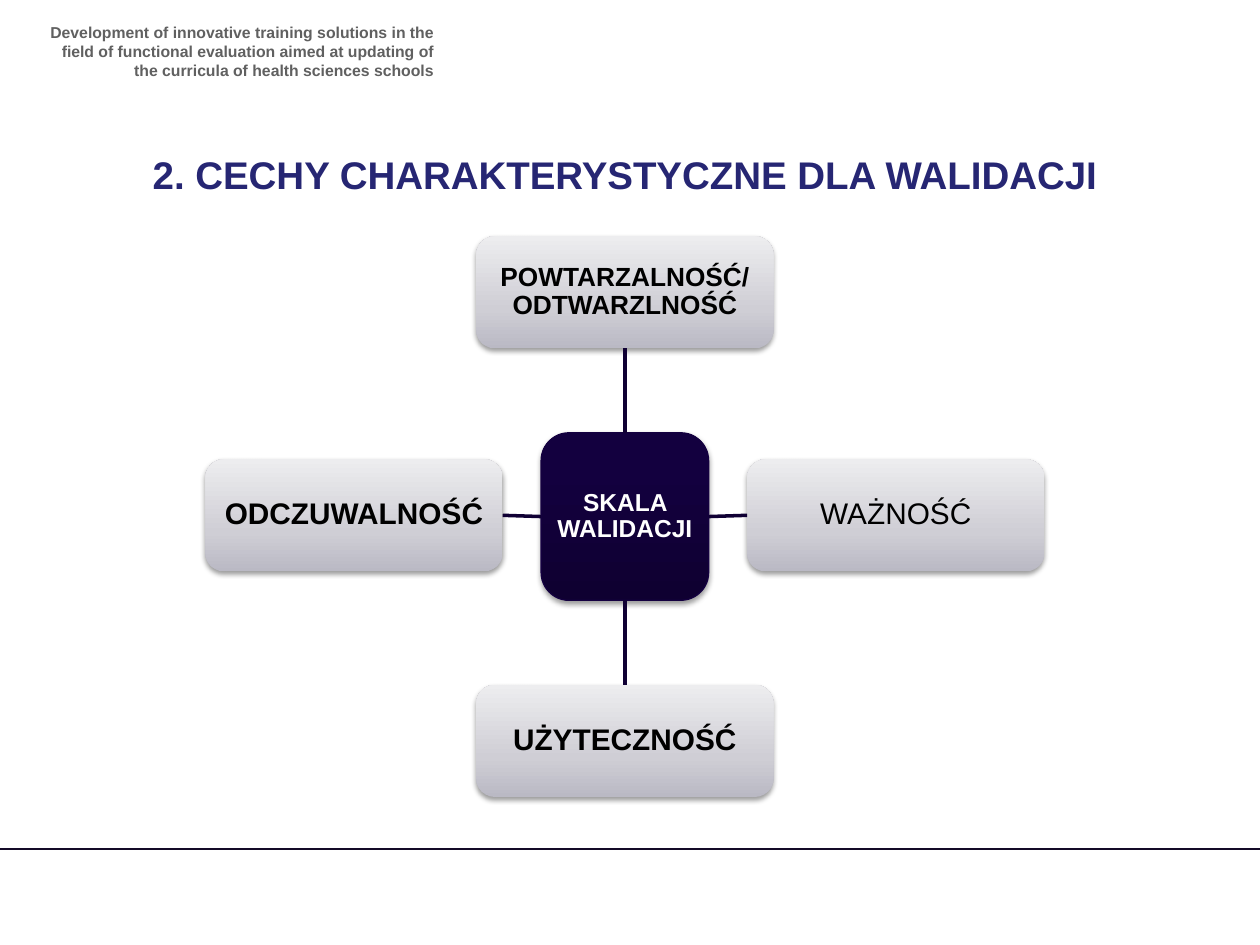
from dataclasses import dataclass

from lxml import etree
from pptx import Presentation
from pptx.dml.color import RGBColor
from pptx.enum.shapes import MSO_CONNECTOR as CONN, MSO_SHAPE as SHAPE
from pptx.enum.text import MSO_ANCHOR as ANCHOR, PP_ALIGN as ALIGN
from pptx.oxml import parse_xml
from pptx.oxml.ns import nsdecls, qn
from pptx.util import Inches, Pt


@dataclass(frozen=True)
class Theme:
    font: str = "Arial"
    header: str = "606060"
    title: str = "262673"
    rule: str = "140A28"
    link: str = "100034"
    hub_line: str = "140040"
    hub_text: str = "FFFFFF"
    spoke_text: str = "000000"
    # Gradient stops run from the bottom of the shape to the top
    hub_fill: tuple = ((0, "0F0031"), (80, "13003F"), (100, "13003F"))
    spoke_fill: tuple = ((0, "BAB9C4"), (35, "CFCED5"), (100, "EDEDEF"))
    header_size: int = 9
    title_size: int = 22
    hub_size: int = 14
    spoke_size: int = 17
    long_spoke_size: int = 15


class Deck:
    def __init__(self, theme):
        self.theme = theme
        self.prs = Presentation()
        self.prs.slide_width, self.prs.slide_height = Inches(10), Inches(7.5)
        self.s = self.prs.slides.add_slide(self.prs.slide_layouts[6])

    def add_words(self, tf, text, size, color, align=ALIGN.CENTER, bold=True):
        tf.word_wrap = True
        p = tf.paragraphs[0]
        p.alignment = align
        r = p.add_run()
        r.text = text
        formats = {"name": self.theme.font, "size": Pt(size), "bold": bold}
        for key, value in formats.items():
            setattr(r.font, key, value)
        r.font.color.rgb = RGBColor.from_string(color)
        return p

    def text(self, box, text, size, color, align=ALIGN.CENTER):
        sp = self.s.shapes.add_textbox(*map(Inches, box))
        self.add_words(sp.text_frame, text, size, color, align)

    def card(self, center, size, text, fill, pt, color, line=None, bold=True):
        """Add a rounded box, placed by its center, with gradient and shadow."""
        (x, y), (w, h) = center, size
        sp = self.s.shapes.add_shape(
            SHAPE.ROUNDED_RECTANGLE,
            *map(Inches, (x - w / 2, y - h / 2, w, h)))
        if line:
            sp.line.color.rgb = RGBColor.from_string(line)
            sp.line.width = Pt(0.75)
        else:
            sp.line.fill.background()
        self.gradient(sp, fill)
        self.soft_shadow(sp)
        tf = sp.text_frame
        tf.vertical_anchor = ANCHOR.MIDDLE
        for side in ("left", "right", "top", "bottom"):
            setattr(tf, f"margin_{side}", Inches(0.04))
        self.add_words(tf, text, pt, color, bold=bold).line_spacing = 0.9
        return sp

    def gradient(self, sp, stops):
        gs = "".join(f'<a:gs pos="{pos * 1000}"><a:srgbClr val="{c}"/></a:gs>'
                     for pos, c in stops)
        fill = parse_xml(
            f'<a:gradFill {nsdecls("a")} rotWithShape="1"><a:gsLst>{gs}</a:gsLst>'
            '<a:lin ang="16200000" scaled="0"/></a:gradFill>')
        sp._element.spPr.find(qn("a:prstGeom")).addnext(fill)

    def soft_shadow(self, sp):
        sp.shadow.inherit = False
        effects = sp._element.spPr.find(qn("a:effectLst"))
        effects.append(parse_xml(
            f'<a:outerShdw {nsdecls("a")} blurRad="{Pt(3.1)}" dist="{Pt(1.6)}" '
            'dir="5400000" rotWithShape="0"><a:srgbClr val="000000">'
            '<a:alpha val="38000"/></a:srgbClr></a:outerShdw>'))

    def line(self, start, end, color, width):
        c = self.s.shapes.add_connector(
            CONN.STRAIGHT, *map(Inches, (*start, *end)))
        c.line.color.rgb = RGBColor.from_string(color)
        c.line.width = Pt(width)
        etree.SubElement(c._element.spPr, qn("a:effectLst"))
        return c

    def link(self, hub, spoke, side):
        c = self.line((0, 0), (0, 0), self.theme.link, 2)
        c.begin_connect(hub, side)
        c.end_connect(spoke, (side + 2) % 4)


def main():
    t = Theme()
    d = Deck(t)

    # Header, title and footer rule
    d.line((0, 6.74), (10, 6.74), t.rule, 1)
    d.text((0.28, 0.13, 3.26, 0.47),
           "Development of innovative training solutions in the ﬁeld of "
           "functional evaluation aimed at updating of the curricula of "
           "health sciences schools", t.header_size, t.header, ALIGN.RIGHT)
    d.text((0.67, 1.15, 8.58, 0.47), "2. CECHY CHARAKTERYSTYCZNE DLA WALIDACJI",
           t.title_size, t.title)

    # Hub in the middle
    cx, cy = 4.96, 4.1
    hub = d.card((cx, cy), (1.33, 1.33), "SKALA WALIDACJI", t.hub_fill,
                 t.hub_size, t.hub_text, t.hub_line)

    # Spokes: hub side, offset from the hub, label, size, bold
    dx, dy = 2.15, 1.78
    spokes = [
        (0, (0, -dy), "POWTARZALNOŚĆ/ ODTWARZLNOŚĆ", t.long_spoke_size, True),
        (3, (dx, -0.01), "WAŻNOŚĆ", t.spoke_size, False),
        (2, (0, dy), "UŻYTECZNOŚĆ", t.spoke_size, True),
        (1, (-dx, -0.01), "ODCZUWALNOŚĆ", t.spoke_size, True),
    ]
    for side, (x, y), label, pt, bold in spokes:
        spoke = d.card((cx + x, cy + y), (2.36, 0.89), label, t.spoke_fill,
                       pt, t.spoke_text, bold=bold)
        d.link(hub, spoke, side)

    d.prs.save("out.pptx")


if __name__ == "__main__":
    main()
